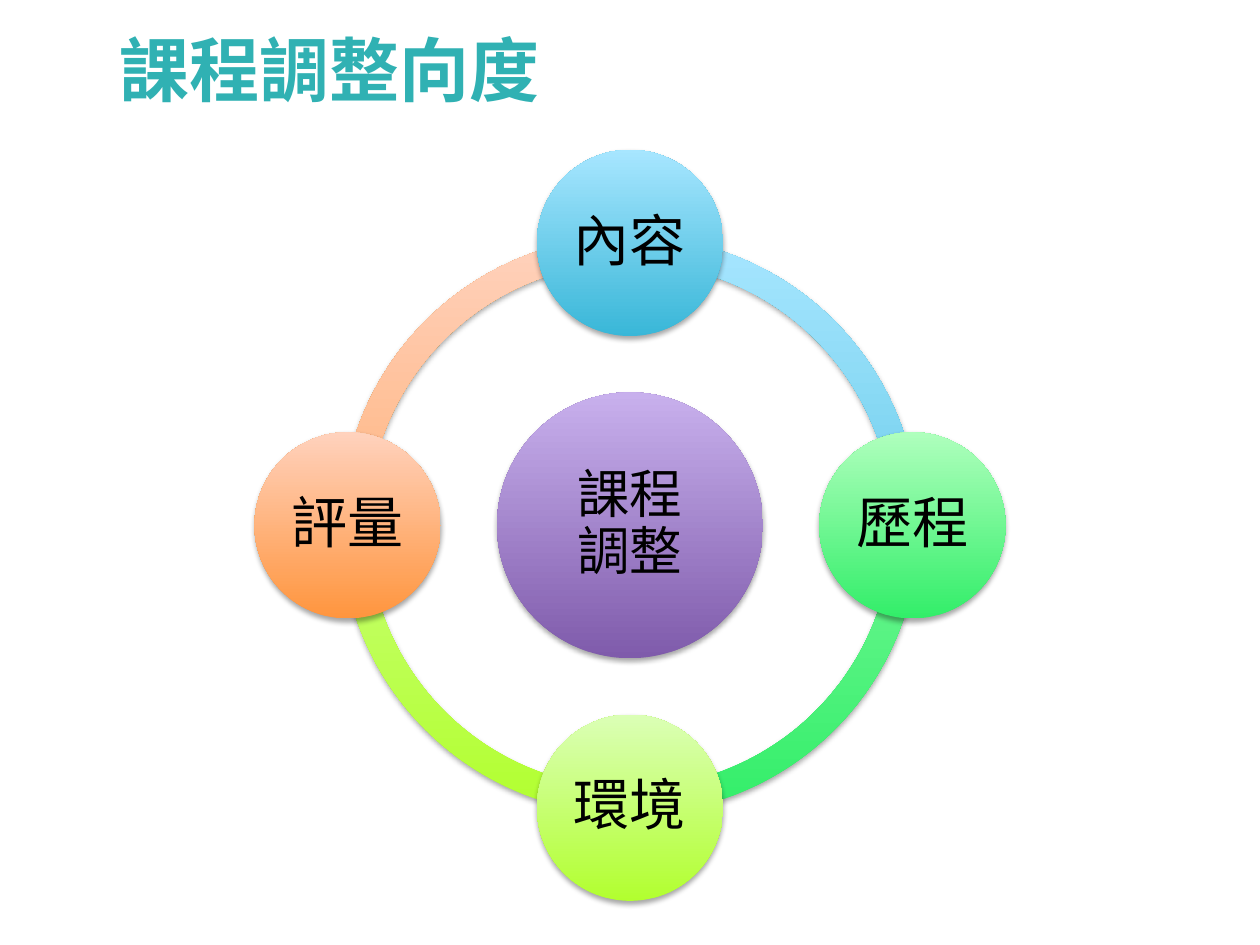
import math
from lxml import etree
from pptx import Presentation
from pptx.dml.color import RGBColor
from pptx.enum.shapes import MSO_SHAPE
from pptx.enum.text import MSO_ANCHOR, PP_ALIGN
from pptx.oxml.ns import qn
from pptx.util import Cm, Pt

ARC, OVAL = MSO_SHAPE.BLOCK_ARC, MSO_SHAPE.OVAL
TOP, MIDDLE = MSO_ANCHOR.TOP, MSO_ANCHOR.MIDDLE
LEFT, CENTER = PP_ALIGN.LEFT, PP_ALIGN.CENTER

BLACK = RGBColor(0x00, 0x00, 0x00)
TEAL = RGBColor(0x30, 0xB1, 0xB3)
# Gradient pairs: bottom colour, top colour
PURPLE = RGBColor(0x7F, 0x5B, 0xAB), RGBColor(0xC8, 0xB0, 0xED)
BLUE = RGBColor(0x39, 0xB7, 0xD8), RGBColor(0xA7, 0xE6, 0xFF)
GREEN = RGBColor(0x32, 0xEE, 0x69), RGBColor(0xAF, 0xFF, 0xBD)
LIME = RGBColor(0xB2, 0xFF, 0x2F), RGBColor(0xDB, 0xFF, 0xB6)
ORANGE = RGBColor(0xFF, 0x95, 0x3E), RGBColor(0xFF, 0xD2, 0xBD)

# Clockwise from the top
ASPECTS = [("內容", BLUE), ("歷程", GREEN), ("環境", LIME), ("評量", ORANGE)]


def add_text(slide, text, x, y, w, h, size=32, font="Calibri", color=BLACK,
             bold=False, align=CENTER, anchor=MIDDLE, inset=None):
    """Add a text box, in cm; a vertical tab in the text breaks the line."""
    tf = slide.shapes.add_textbox(Cm(x), Cm(y), Cm(w), Cm(h)).text_frame
    tf.word_wrap = True
    tf.vertical_anchor = anchor
    if inset is not None:
        tf.margin_left = tf.margin_right = Cm(inset)
        tf.margin_top = tf.margin_bottom = Cm(inset)
    p = tf.paragraphs[0]
    p.text = text
    p.alignment = align
    p.line_spacing = 0.9
    for r in p.runs:
        r.font.size = Pt(size)
        r.font.bold = bold
        r.font.color.rgb = color
        r.font.name = font
        ea = etree.SubElement(r.font._element, qn("a:ea"))
        ea.set("typeface", font)


def add_round(slide, kind, cx, cy, d, colors):
    """Add a shaded, shadowed shape of diameter d centred on cx, cy."""
    s = slide.shapes.add_shape(kind, Cm(cx - d / 2), Cm(cy - d / 2), Cm(d), Cm(d))
    s.line.fill.background()
    s.fill.gradient()
    s.fill.gradient_angle = 90
    for stop, color in zip(s.fill.gradient_stops, colors):
        stop.color.rgb = color
    # Soft shadow below the shape
    s.shadow.inherit = False
    effects = s._element.spPr.find(qn("a:effectLst"))
    shadow = etree.SubElement(effects, qn("a:outerShdw"), blurRad=str(Pt(3.1)),
                              dist=str(Pt(1.8)), dir="5400000", rotWithShape="0")
    black = etree.SubElement(shadow, qn("a:srgbClr"), val="000000")
    etree.SubElement(black, qn("a:alpha"), val="35000")
    return s


def add_disc(slide, text, cx, cy, d, colors, size):
    """Add a circle with its label in the inscribed square."""
    add_round(slide, OVAL, cx, cy, d, colors)
    side = d / math.sqrt(2)
    add_text(slide, text, cx - side / 2, cy - side / 2, side, side,
             size=size, inset=0.1)


def add_title(slide, x, y, w, h):
    add_text(slide, "課程調整向度", x, y, w, h, size=40, font="Noto Sans CJK SC",
             color=TEAL, bold=True, align=LEFT, anchor=TOP)


def add_cycle(slide, x, y, size):
    """Draw the ring, the hub and the four aspects in a square box."""
    cx, cy = x + size / 2, y + size / 2
    node = size * 0.248
    orbit = (size - node) / 2
    # Ring: one quarter per aspect, last one at the back
    for i, (_, colors) in reversed(list(enumerate(ASPECTS))):
        arc = add_round(slide, ARC, cx, cy, size * 0.77, colors)
        start = (270 + 90 * i) % 360
        # Angles are held in units of 100000 / 60000 degrees
        arc.adjustments[0] = start * 0.6
        arc.adjustments[1] = (start + 90) % 360 * 0.6
        arc.adjustments[2] = 0.046
    # Hub
    add_disc(slide, "課程\v調整", cx, cy, size * 0.354, PURPLE, 30)
    # Aspects
    for i, (text, colors) in enumerate(ASPECTS):
        angle = math.radians(90 * i)
        add_disc(slide, text, cx + orbit * math.sin(angle),
                 cy - orbit * math.cos(angle), node, colors, 32)


def main():
    prs = Presentation()
    prs.slide_width, prs.slide_height = Cm(25.4), Cm(19.05)
    slide = prs.slides.add_slide(prs.slide_layouts[6])
    add_cycle(slide, 5.13, 3.02, 15.14)
    add_title(slide, 2.16, 0.61, 22.86, 2.39)
    prs.save("out.pptx")


if __name__ == "__main__":
    main()
